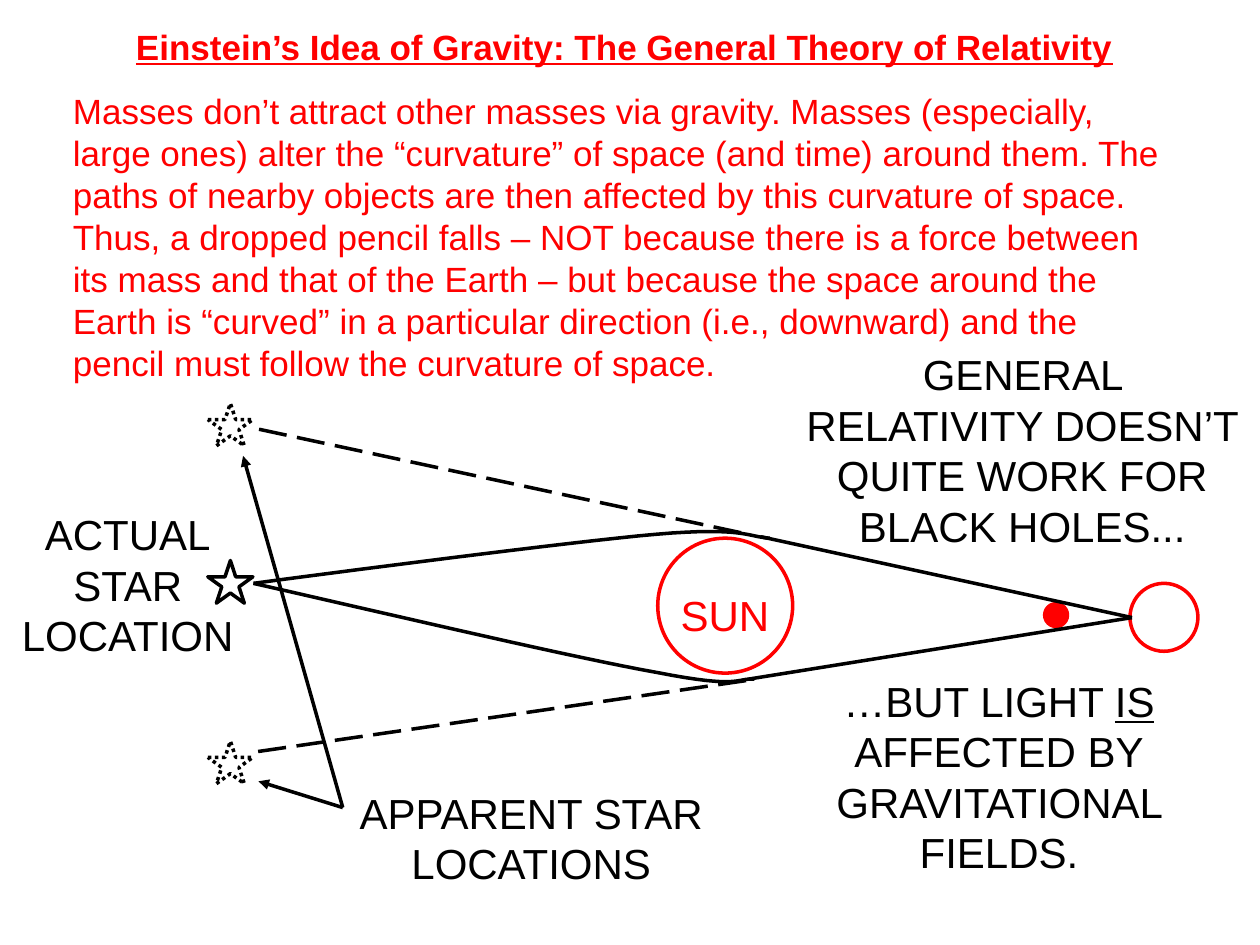
from dataclasses import dataclass
from typing import NamedTuple

from lxml import etree
from pptx import Presentation
from pptx.dml.color import RGBColor
from pptx.enum.dml import MSO_LINE
from pptx.enum.shapes import MSO_CONNECTOR, MSO_SHAPE
from pptx.enum.text import MSO_ANCHOR, PP_ALIGN
from pptx.oxml.ns import qn
from pptx.util import Cm, Pt

OVAL, STAR = MSO_SHAPE.OVAL, MSO_SHAPE.STAR_5_POINT
STRAIGHT = MSO_CONNECTOR.STRAIGHT
DOTS, DASH, SOLID = MSO_LINE.ROUND_DOT, MSO_LINE.LONG_DASH, MSO_LINE.SOLID
LEFT, CENTER = PP_ALIGN.LEFT, PP_ALIGN.CENTER
TOP, MIDDLE = MSO_ANCHOR.TOP, MSO_ANCHOR.MIDDLE

RED = RGBColor(255, 0, 0)
BLACK = RGBColor(0, 0, 0)
WHITE = RGBColor(255, 255, 255)
STEPS = 16


class Spot(NamedTuple):
    x: float
    y: float


class Box(NamedTuple):
    x: float
    y: float
    w: float
    h: float


@dataclass
class Label:
    box: Box
    lines: list[str]
    size: int = 24
    color: RGBColor = BLACK
    align: PP_ALIGN = CENTER
    anchor: MSO_ANCHOR = TOP
    strong: bool = False


@dataclass
class Figure:
    kind: MSO_SHAPE
    box: Box
    color: RGBColor
    fill: RGBColor | None = None
    dash: MSO_LINE = SOLID


@dataclass
class Ray:
    start: Spot
    end: Spot
    dash: MSO_LINE = SOLID
    arrow: bool = False


def set_line(line, color: RGBColor, dash: MSO_LINE = SOLID) -> None:
    line.color.rgb = color
    line.width = Pt(2)
    line.dash_style = dash


def add_label(slide, label: Label) -> None:
    frame = slide.shapes.add_textbox(*map(Cm, label.box)).text_frame
    frame.word_wrap = True
    frame.vertical_anchor = label.anchor
    for index, line in enumerate(label.lines):
        para = frame.add_paragraph() if index else frame.paragraphs[0]
        para.alignment = label.align
        font = para.font
        font.name, font.size = "Arial", Pt(label.size)
        font.color.rgb = label.color
        font.bold = font.underline = label.strong
        for part, piece in enumerate(line.split("_")):
            run = para.add_run()
            run.text = piece
            if part % 2 or label.strong:
                run.font.underline = True


def add_figure(slide, figure: Figure) -> None:
    shape = slide.shapes.add_shape(figure.kind, *map(Cm, figure.box))
    shape.shadow.inherit = False
    if figure.fill is None:
        shape.fill.background()
    else:
        shape.fill.solid()
        shape.fill.fore_color.rgb = figure.fill
    set_line(shape.line, figure.color, figure.dash)


def add_ray(slide, ray: Ray) -> None:
    link = slide.shapes.add_connector(STRAIGHT, *map(Cm, ray.start + ray.end))
    set_line(link.line, BLACK, ray.dash)
    props = link._element.spPr
    if ray.arrow:
        etree.SubElement(props.find(qn("a:ln")), qn("a:tailEnd"), type="triangle")
    etree.SubElement(props, qn("a:effectLst"))


def bend(knots: list[Spot], t: float) -> tuple[int, int]:
    parts = ((1 - t) ** 3, 3 * t * (1 - t) ** 2, 3 * t * t * (1 - t), t ** 3)
    x = sum(part * knot.x for part, knot in zip(parts, knots))
    y = sum(part * knot.y for part, knot in zip(parts, knots))
    return Cm(x), Cm(y)


def add_curve(slide, knots: list[Spot]) -> None:
    points = [
        bend(knots[first:first + 4], step / STEPS)
        for first in range(0, len(knots) - 1, 3)
        for step in range(1, STEPS + 1)
    ]
    path = slide.shapes.build_freeform(Cm(knots[0].x), Cm(knots[0].y))
    path.add_line_segments(points, close=False)
    shape = path.convert_to_shape()
    shape.shadow.inherit = False
    shape.fill.background()
    set_line(shape.line, BLACK)


def ring(x: float, y: float, size: float, fill: RGBColor | None = None) -> Figure:
    return Figure(OVAL, Box(x, y, size, size), RED, fill)


def star(y: float, dash: MSO_LINE = SOLID) -> Figure:
    return Figure(STAR, Box(4.19, y, 0.91, 0.86), BLACK, WHITE, dash)


BODY = (
    "Masses don’t attract other masses via gravity. Masses (especially, large "
    "ones) alter the “curvature” of space (and time) around them. The paths of "
    "nearby objects are then affected by this curvature of space. Thus, a dropped "
    "pencil falls – NOT because there is a force between its mass and that of the "
    "Earth – but because the space around the Earth is “curved” in a particular "
    "direction (i.e., downward) and the pencil must follow the curvature of space."
)
LABELS = [
    Label(Box(15.95, 6.91, 9.32, 4.75),
          ["GENERAL RELATIVITY DOESN’T QUITE WORK FOR BLACK HOLES..."]),
    Label(Box(1.22, 1.68, 22.76, 6.17), [BODY], 20, RED, LEFT, MIDDLE),
    Label(Box(12.8, 11.76, 3.63, 1.37), ["SUN"], color=RED),
    Label(Box(16.38, 13.49, 7.52, 4.45),
          ["…BUT LIGHT _IS_ AFFECTED BY", "GRAVITATIONAL FIELDS."]),
    Label(Box(6.2, 15.75, 9.02, 2.31), ["APPARENT STAR", "LOCATIONS"]),
    Label(Box(-0.03, 10.13, 5.21, 3.23), ["ACTUAL", "STAR", "LOCATION"]),
    Label(Box(1.35, 0.38, 22.48, 1.19),
          ["Einstein’s Idea of Gravity: The General Theory of Relativity"],
          20, RED, strong=True),
]
EARTH, SUN = ring(22.78, 11.76, 1.37), ring(13.26, 10.85, 2.72)
MOON = ring(21.06, 12.17, 0.46, RED)
FIGURES = [EARTH, SUN, MOON, star(14.94, DOTS), star(8.13, DOTS), star(11.3)]
SOURCE, EYE, FORK = Spot(5.11, 11.76), Spot(22.82, 12.45), Spot(6.91, 16.28)
RAYS = [
    Ray(EYE, Spot(15.34, 10.82)),
    Ray(EYE, Spot(15.09, 13.69)),
    Ray(Spot(15.04, 13.72), Spot(5.13, 15.16), DASH),
    Ray(Spot(14.94, 10.74), Spot(5.16, 8.64), DASH),
    Ray(FORK, Spot(5.21, 15.75), arrow=True),
    Ray(FORK, Spot(4.9, 9.19), arrow=True),
]
CURVES = [
    [SOURCE, Spot(6.45, 11.58), Spot(11.51, 10.92), Spot(13.23, 10.77),
     Spot(14.99, 10.62), Spot(15.06, 10.82), Spot(15.52, 10.85)],
    [SOURCE, Spot(8.36, 12.5), Spot(11.58, 13.26), Spot(13.26, 13.56),
     Spot(14.96, 13.89), Spot(14.81, 13.67), Spot(15.21, 13.69)],
]


def main() -> None:
    deck = Presentation()
    deck.slide_width, deck.slide_height = Cm(25.4), Cm(19.05)
    slide = deck.slides.add_slide(deck.slide_layouts[6])
    for figure in FIGURES:
        add_figure(slide, figure)
    for ray in RAYS:
        add_ray(slide, ray)
    for knots in CURVES:
        add_curve(slide, knots)
    for label in LABELS:
        add_label(slide, label)
    deck.save("out.pptx")


if __name__ == "__main__":
    main()
